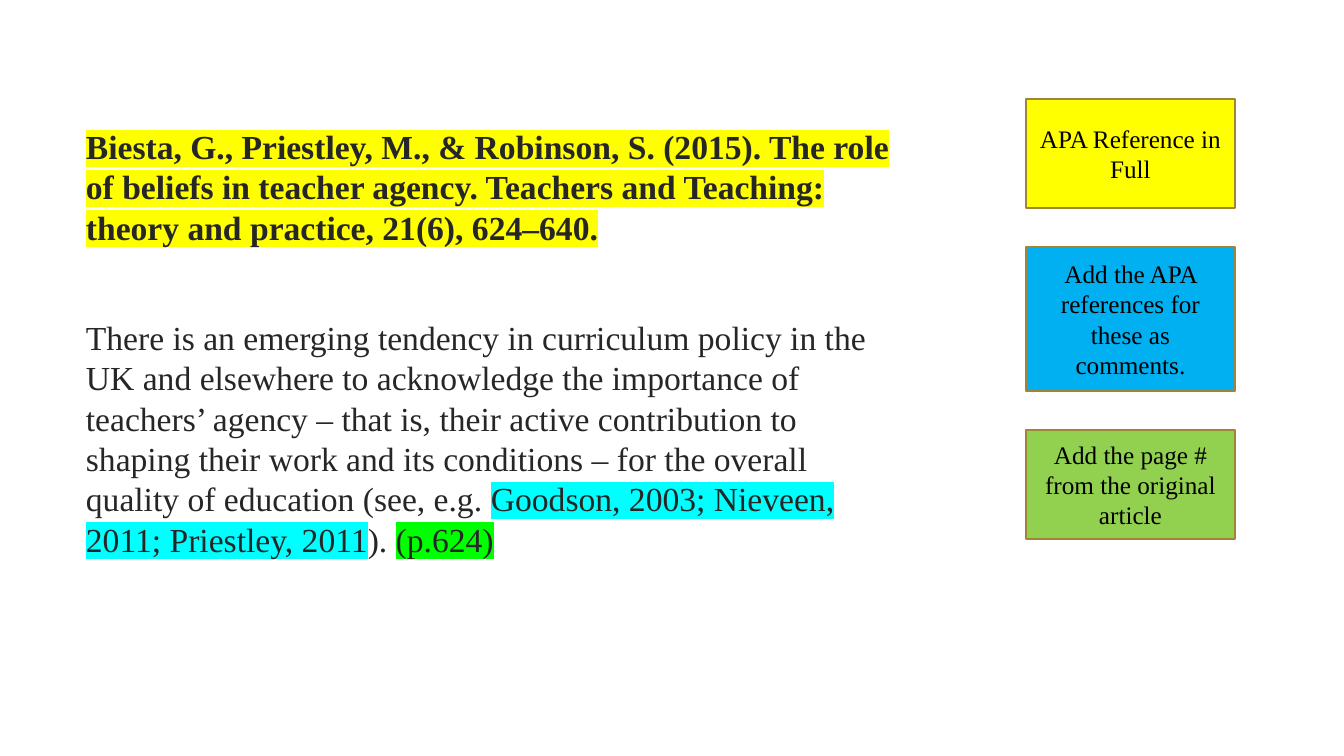
"""Build a slide showing a cited quotation beside three colour-keyed instructions."""
from lxml import etree
from pptx import Presentation, util as u
from pptx.dml.color import RGBColor
from pptx.enum import shapes, text
from pptx.oxml.ns import qn

SCALE = 914400 / 100.8
FONT = "Times New Roman"
INK = "262626"
QUOTATION = [
    [("Biesta, G., Priestley, M., & Robinson, S. (2015). The role of beliefs in teacher agency. "
      "Teachers and Teaching: theory and practice, 21(6), 624–640.", "FFFF00", True)],
    [("There is an emerging tendency in curriculum policy in the UK and elsewhere to acknowledge "
      "the importance of teachers’ agency – that is, their active contribution to shaping their "
      "work and its conditions – for the overall quality of education (see, e.g. ", None, False),
     ("Goodson, 2003; Nieveen, 2011; Priestley, 2011", "00FFFF", False),
     ("). ", None, False),
     ("(p.624)", "00FF00", False)],
]
INSTRUCTIONS = [
    ("APA Reference in Full", "FFFF00", 109),
    ("Add the APA references for these as comments.", "00B0F0", 144),
    ("Add the page # from the original article", "92D050", 109),
]
KEY_LEFT, KEY_TOP, KEY_WIDTH, KEY_GAP = 1026, 99, 209, 39


def px(length):
    return u.Emu(round(length * SCALE))


def colour(value):
    return RGBColor.from_string(value)


def add_span(para, words, size, ink, bold=False, highlight=None):
    span = para.add_run()
    span.text = words
    for name, value in {"name": FONT, "size": u.Pt(size), "bold": bold}.items():
        setattr(span.font, name, value)
    span.font.color.rgb = colour(ink)
    if highlight:
        mark = etree.Element(qn("a:highlight"))
        etree.SubElement(mark, qn("a:srgbClr"), val=highlight)
        span.font.fill
        span.font._element.find(qn("a:solidFill")).addnext(mark)


def add_quotation(page):
    box = page.shapes.add_textbox(px(76), px(121), px(840), px(541))
    frame = box.text_frame
    frame.word_wrap = True
    for index, spans in enumerate(QUOTATION):
        para = frame.add_paragraph() if index else frame.paragraphs[0]
        para.space_before = u.Pt(50 if index else 0)
        for words, highlight, bold in spans:
            add_span(para, words, 24, INK, bold, highlight)


def add_instructions(page):
    top = KEY_TOP
    for words, fill, height in INSTRUCTIONS:
        box = page.shapes.add_shape(shapes.MSO_SHAPE.RECTANGLE, px(KEY_LEFT), px(top),
                                    px(KEY_WIDTH), px(height))
        box.shadow.inherit = False
        box.fill.solid()
        box.fill.fore_color.rgb = colour(fill)
        box.line.color.rgb = colour("A18435")
        box.line.width = u.Pt(1.25)
        box.text_frame.vertical_anchor = text.MSO_ANCHOR.MIDDLE
        para = box.text_frame.paragraphs[0]
        para.alignment = text.PP_ALIGN.CENTER
        add_span(para, words, 18, "000000")
        top += height + KEY_GAP


def main():
    deck = Presentation()
    deck.slide_width, deck.slide_height = px(1344), px(756)
    page = deck.slides.add_slide(deck.slide_layouts[6])
    add_quotation(page)
    add_instructions(page)
    deck.save("out.pptx")


if __name__ == "__main__":
    main()
